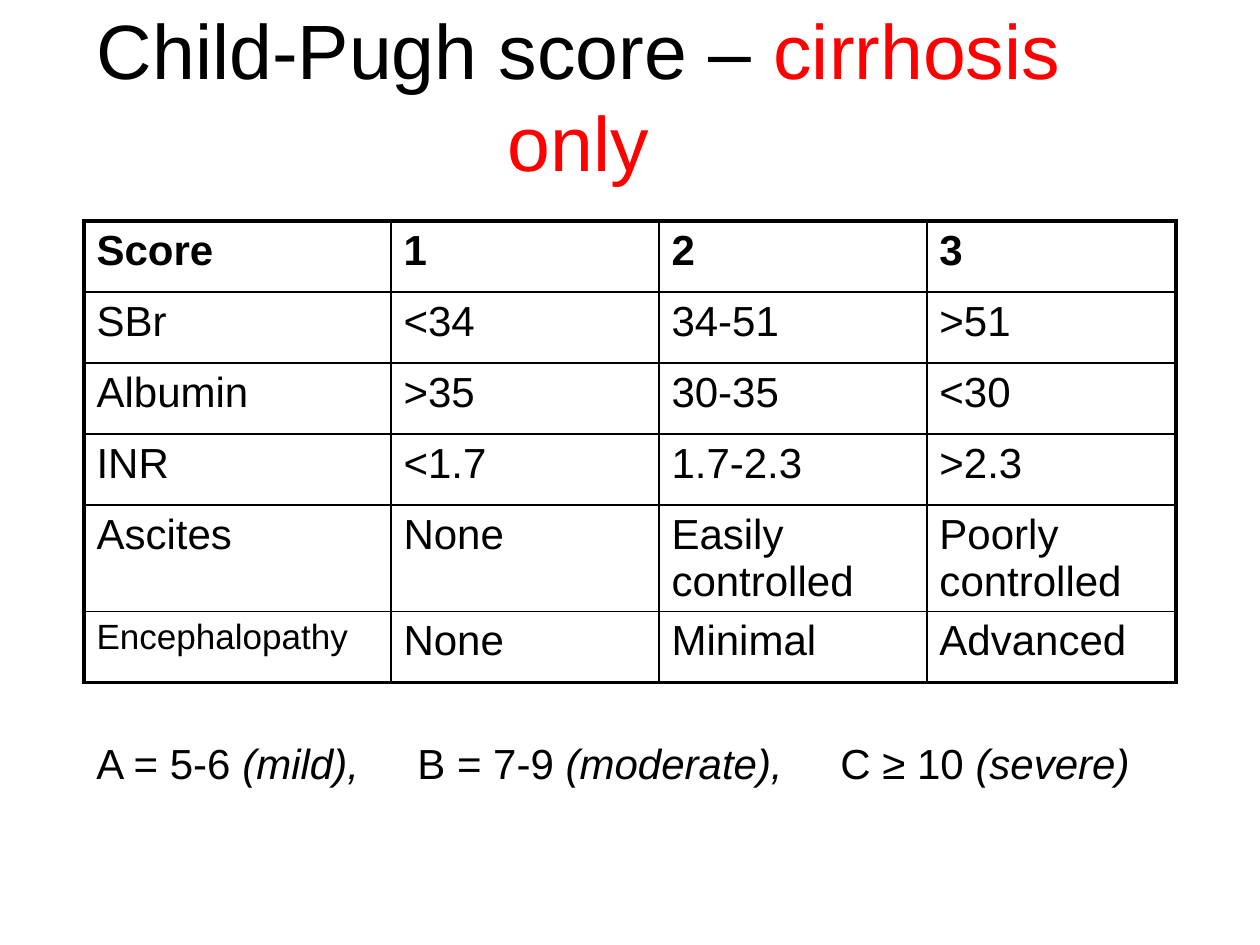
from typing import NamedTuple

from lxml import etree
from pptx import Presentation
from pptx import util as u
from pptx.dml.color import RGBColor
from pptx.enum import text
from pptx.oxml.ns import qn

BLACK = RGBColor(0, 0, 0)
RED = RGBColor(255, 0, 0)
WHITE = RGBColor(255, 255, 255)
FONT = "Arial"
THIN, THICK = 1, 2.25


class Run(NamedTuple):
    words: str
    size: int = 24
    color: RGBColor = BLACK
    bold: bool = False
    slant: bool = False


class Box(NamedTuple):
    left: int
    top: int
    width: int
    height: int


HEAD = [Run("Child-Pugh score – ", 44), Run("cirrhosis only", 44, RED)]
ROWS = [
    ["Score", "1", "2", "3"],
    ["SBr", "<34", "34-51", ">51"],
    ["Albumin", ">35", "30-35", "<30"],
    ["INR", "<1.7", "1.7-2.3", ">2.3"],
    ["Ascites", "None", "Easily controlled", "Poorly controlled"],
    ["Encephalopathy", "None", "Minimal", "Advanced"],
]
WIDTHS = [307, 268, 268, 249]
HEIGHTS = [71, 71, 71, 71, 101, 71]
GRADES = [("A = 5-6 ", "(mild),"), ("\tB = 7-9 ", "(moderate),"),
          ("\tC ≥ 10 ", "(severe)")]
TABS = [321, 744]


def px(n: int) -> u.Emu:
    return u.Emu(round(n * 914400 / 126))


def place(box: Box) -> list[u.Emu]:
    return [px(n) for n in box]


def write(para, runs: list[Run]) -> None:
    for item in runs:
        run = para.add_run()
        run.text = item.words
        font = run.font
        font.name, font.size = FONT, u.Pt(item.size)
        font.bold, font.italic = item.bold, item.slant
        font.color.rgb = item.color


def edge(cell, side: str, width: float) -> None:
    props = cell._tc.get_or_add_tcPr()
    line = etree.SubElement(props, qn(f"a:ln{side}"), w=str(u.Pt(width)))
    fill = etree.SubElement(line, qn("a:solidFill"))
    etree.SubElement(fill, qn("a:srgbClr"), val=str(BLACK))


def add_title(slide, box: Box) -> None:
    title = slide.shapes.title
    title.left, title.top, title.width, title.height = place(box)
    frame = title.text_frame
    frame.auto_size = text.MSO_AUTO_SIZE.NONE
    frame.vertical_anchor = text.MSO_ANCHOR.MIDDLE
    para = frame.paragraphs[0]
    para.alignment = text.PP_ALIGN.CENTER
    write(para, HEAD)


def add_scores(slide, box: Box) -> None:
    table = slide.shapes.add_table(len(ROWS), len(WIDTHS), *place(box)).table
    table.first_row = table.horz_banding = False
    for col, width in zip(table.columns, WIDTHS):
        col.width = px(width)
    for row, height in zip(table.rows, HEIGHTS):
        row.height = px(height)
    for i, row in enumerate(ROWS):
        for j, words in enumerate(row):
            cell = table.cell(i, j)
            # The outer frame is heavier than the inner grid
            outer = {"L": j == 0, "R": j == len(row) - 1,
                     "T": i == 0, "B": i == len(ROWS) - 1}
            for side, heavy in outer.items():
                edge(cell, side, THICK if heavy else THIN)
            cell.fill.background()
            size = 20 if words == "Encephalopathy" else 24
            write(cell.text_frame.paragraphs[0],
                  [Run(words, size, bold=i == 0)])


def add_grades(slide, box: Box) -> None:
    frame = slide.shapes.add_textbox(*place(box)).text_frame
    frame.word_wrap = True
    para = frame.paragraphs[0]
    stops = etree.SubElement(para._p.get_or_add_pPr(), qn("a:tabLst"))
    for stop in TABS:
        etree.SubElement(stops, qn("a:tab"), pos=str(px(stop)), algn="l")
    for grade, level in GRADES:
        write(para, [Run(grade), Run(level, slant=True)])


def main() -> None:
    deck = Presentation()
    deck.slide_width, deck.slide_height = px(1260), px(945)
    slide = deck.slides.add_slide(deck.slide_layouts[5])
    slide.background.fill.solid()
    slide.background.fill.fore_color.rgb = WHITE

    # Heading, score table, grade key
    add_title(slide, Box(26, 32, 1105, 126))
    add_scores(slide, Box(84, 221, sum(WIDTHS), sum(HEIGHTS)))
    add_grades(slide, Box(84, 731, 1091, 63))
    deck.save("out.pptx")


if __name__ == "__main__":
    main()
